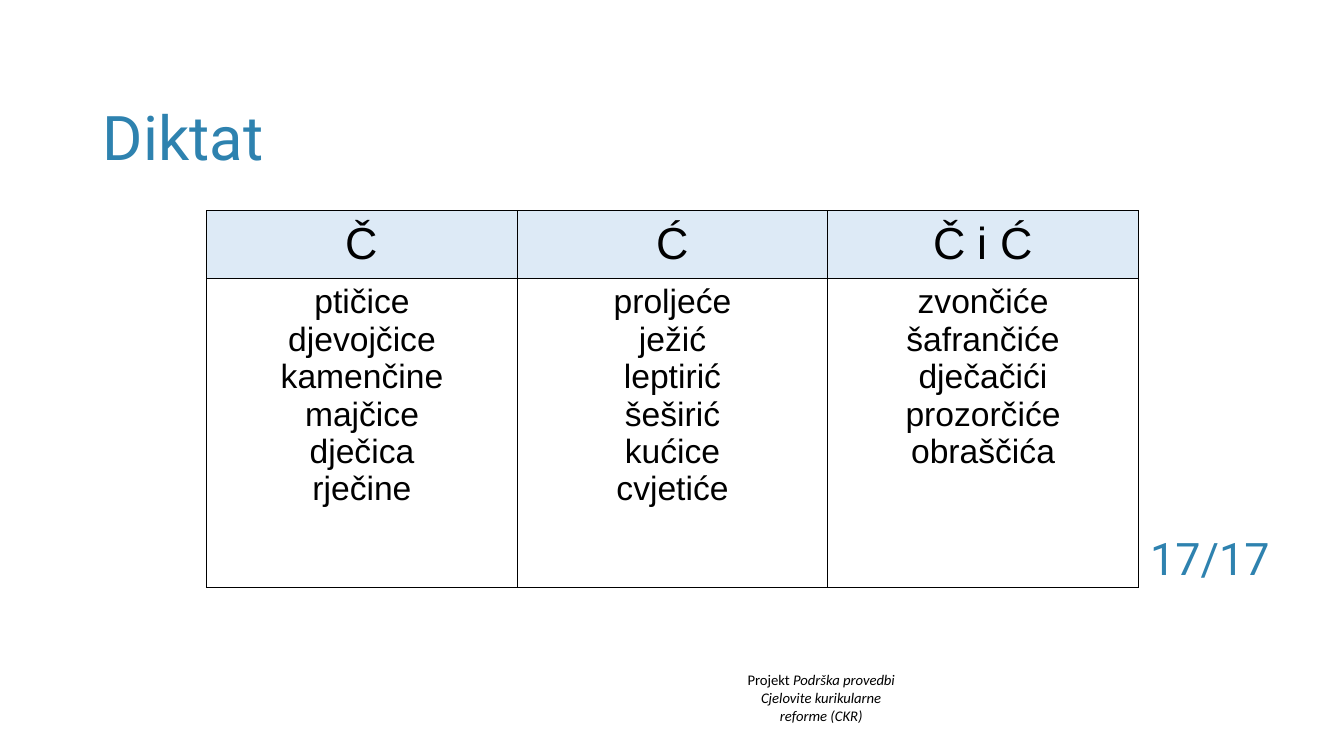
from lxml import etree
from pptx import Presentation
from pptx.dml.color import RGBColor
from pptx.enum.text import MSO_ANCHOR, PP_ALIGN
from pptx.oxml.ns import qn
from pptx.util import Inches, Pt

BLACK = RGBColor(0x00, 0x00, 0x00)
BLUE = RGBColor(0x2E, 0x82, 0xAF)
PALE_BLUE = RGBColor(0xDD, 0xEA, 0xF6)
CENTER = PP_ALIGN.CENTER
TOP, MIDDLE = MSO_ANCHOR.TOP, MSO_ANCHOR.MIDDLE

WORDS = {
    "Č": ["ptičice", "djevojčice", "kamenčine", "majčice", "dječica", "rječine"],
    "Ć": ["proljeće", "ježić", "leptirić", "šeširić", "kućice", "cvjetiće"],
    "Č i Ć": ["zvončiće", "šafrančiće", "dječačići", "prozorčiće", "obraščića"],
}


def set_font(paragraph, name, size, color):
    paragraph.font.name = name
    paragraph.font.size = Pt(size)
    paragraph.font.color.rgb = color


def fill_cell(cell, lines, size, anchor):
    """Write centred lines into a table cell and give it thin black borders."""
    cell.vertical_anchor = anchor
    cell.text = "\n".join(lines)
    for paragraph in cell.text_frame.paragraphs:
        paragraph.alignment = CENTER
        set_font(paragraph, "Arial", size, BLACK)
    properties = cell._tc.get_or_add_tcPr()
    for position, side in enumerate(("a:lnL", "a:lnR", "a:lnT", "a:lnB")):
        line = etree.Element(qn(side), w=str(Pt(1)))
        solid = etree.SubElement(line, qn("a:solidFill"))
        etree.SubElement(solid, qn("a:srgbClr"), val=str(BLACK))
        properties.insert(position, line)


presentation = Presentation()
presentation.slide_width = Inches(13.33)
presentation.slide_height = Inches(7.5)
slide = presentation.slides.add_slide(presentation.slide_layouts[5])

# Project footer
footer = slide.shapes.add_textbox(Inches(6.99), Inches(6.61), Inches(2.31), Inches(0.63))
footer.text_frame.word_wrap = True
project = footer.text_frame.paragraphs[0]
project.add_run().text = "Projekt "
programme = project.add_run()
programme.text = "Podrška provedbi"
programme.font.italic = True
reform = footer.text_frame.add_paragraph()
reform.text = "Cjelovite kurikularne\vreforme (CKR)"
reform.font.italic = True
for paragraph in (project, reform):
    paragraph.alignment = CENTER
    set_font(paragraph, "Calibri", 10.5, BLACK)

# Title
title = slide.shapes.title
title.left, title.top = Inches(0.92), Inches(0.67)
title.width, title.height = Inches(11.5), Inches(1.45)
title.text_frame.text = "Diktat"
title.text_frame.vertical_anchor = MIDDLE
heading = title.text_frame.paragraphs[0]
heading.alignment = PP_ALIGN.LEFT
heading.line_spacing = 0.9
set_font(heading, "Roboto", 44, BLUE)

# Word table
table = slide.shapes.add_table(
    2, len(WORDS), Inches(2.05), Inches(2.09), Inches(9.24), Inches(3.74)
).table
table.horz_banding = False
table.first_row = False
table.rows[0].height = Inches(0.67)
table.rows[1].height = Inches(3.07)
for column, (letter, words) in enumerate(WORDS.items()):
    header, body = table.cell(0, column), table.cell(1, column)
    header.fill.solid()
    header.fill.fore_color.rgb = PALE_BLUE
    body.fill.background()
    fill_cell(header, [letter], 32, MIDDLE)
    fill_cell(body, words, 24, TOP)

# Score
score = slide.shapes.add_textbox(Inches(10.99), Inches(5.14), Inches(2.02), Inches(0.85))
score.text_frame.word_wrap = True
score.text_frame.vertical_anchor = MIDDLE
result = score.text_frame.paragraphs[0]
result.text = "17/17"
result.alignment = CENTER
result.line_spacing = 0.9
set_font(result, "Roboto", 32, BLUE)

presentation.save("out.pptx")
